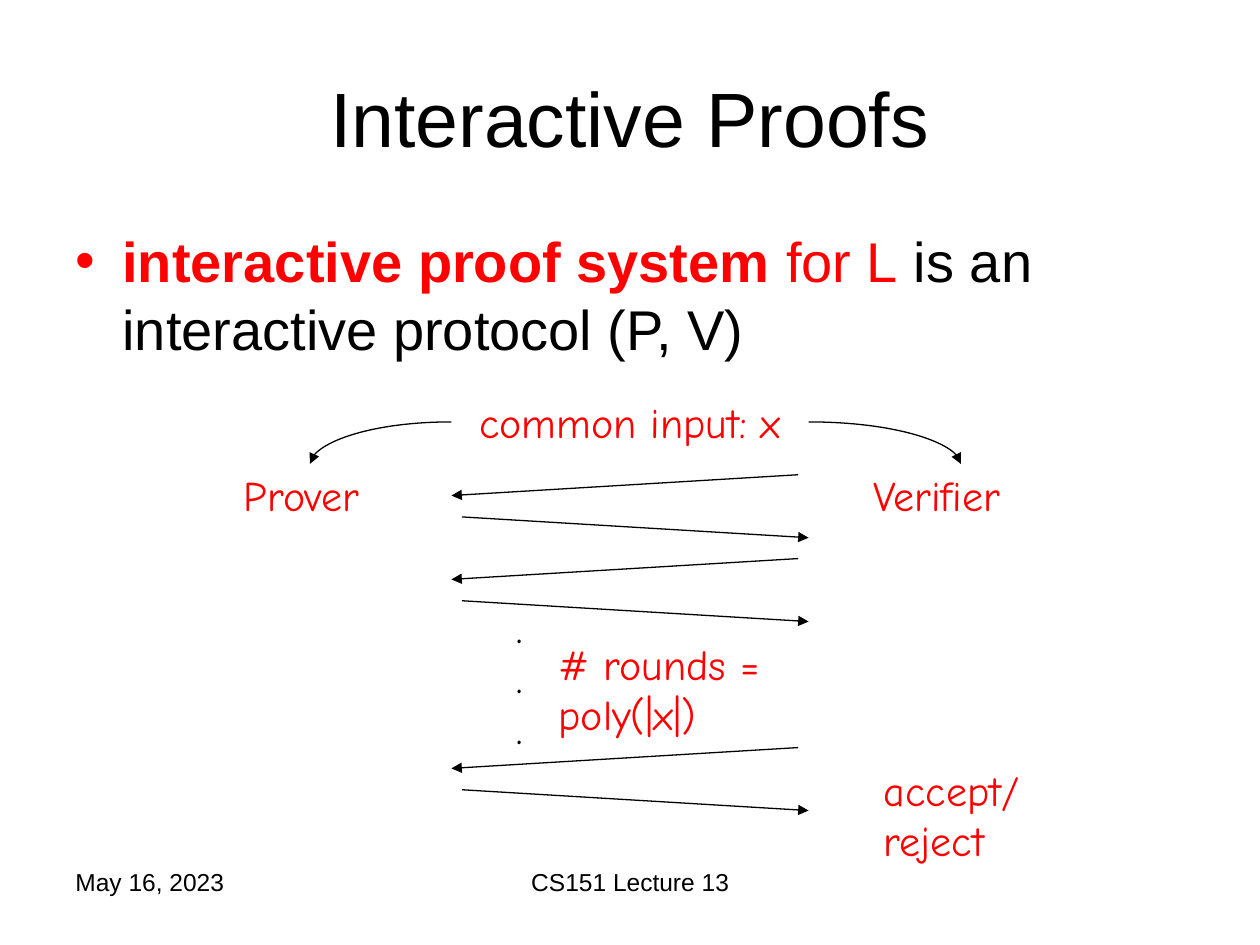
from dataclasses import dataclass

from lxml.etree import SubElement
from pptx import Presentation
from pptx.dml.color import RGBColor
from pptx.enum.shapes import MSO_CONNECTOR as Link
from pptx.enum.text import MSO_ANCHOR as Anchor, PP_ALIGN as Align
from pptx.oxml.ns import qn
from pptx.util import Cm, Pt


@dataclass(frozen=True)
class Theme:
    ink: RGBColor = RGBColor(0, 0, 0)
    accent: RGBColor = RGBColor(255, 0, 0)
    sans: str = "Arial"
    hand: str = "Comic Neue"
    title: int = 44
    body: int = 32
    label: int = 24
    footer: int = 14
    line: float = 0.75


theme = Theme()
deck = Presentation()
deck.slide_width, deck.slide_height = Cm(25.4), Cm(19.05)
page = deck.slides.add_slide(deck.slide_layouts[6])


def add_text(text, *, at, size, font=theme.sans, color=theme.ink,
             align=Align.LEFT, anchor=Anchor.TOP):
    box = page.shapes.add_textbox(*map(Cm, at))
    frame = box.text_frame
    frame.word_wrap = True
    frame.vertical_anchor = anchor
    para = frame.paragraphs[0]
    para.alignment = align
    pieces = [(text, color, False)] if isinstance(text, str) else text
    for words, tint, bold in pieces:
        span = para.add_run()
        span.text = words
        span.font.name = font
        span.font.size = Pt(size)
        span.font.bold = bold
        span.font.color.rgb = tint
    return box


def add_arrow(kind, start, end):
    arrow = page.shapes.add_connector(kind, *map(Cm, (*start, *end)))
    arrow.line.color.rgb = theme.ink
    arrow.line.width = Pt(theme.line)
    SubElement(arrow.line._get_or_add_ln(), qn("a:tailEnd"), type="triangle")
    SubElement(arrow._element.spPr, qn("a:effectLst"))
    return arrow


add_text("Interactive Proofs", at=(1.27, 0.76, 22.86, 3.18), size=theme.title,
         align=Align.CENTER, anchor=Anchor.MIDDLE)

definition = add_text(
    [("interactive proof system", theme.accent, True),
     (" for L", theme.accent, False),
     (" is an interactive protocol (P, V)", theme.ink, False)],
    at=(1.27, 4.45, 22.86, 12.57), size=theme.body)
bullet_para = definition.text_frame.paragraphs[0]
bullet_para.space_before = Pt(3)
bullet_format = bullet_para._p.get_or_add_pPr()
bullet_format.set("marL", str(Cm(0.95)))
bullet_format.set("indent", str(-Cm(0.95)))
SubElement(bullet_format, qn("a:buFont"), typeface=theme.sans)
SubElement(bullet_format, qn("a:buChar"), char="•")

labels = {}
for name, at, color, align in [
    ("Prover", (4.66, 9.35, 3.18, 1.27), theme.accent, Align.LEFT),
    ("Verifier", (17.36, 9.35, 4.02, 1.27), theme.accent, Align.LEFT),
    (". . .", (10.16, 12, 0.85, 3.3), theme.ink, Align.LEFT),
    ("common input: x", (9.1, 7.87, 7.2, 1.27), theme.accent, Align.CENTER),
    ("accept/reject", (17.57, 15.28, 3.81, 2.29), theme.accent, Align.LEFT),
    ("# rounds = poly(|x|)", (11.01, 12.74, 5.08, 2.29), theme.accent, Align.LEFT),
]:
    labels[name] = add_text(name, at=at, size=theme.label, font=theme.hand,
                            color=color, align=align)

for top in (9.57, 11.26, 15.07):
    add_arrow(Link.STRAIGHT, (16.09, top), (9.1, top + 0.42))
    add_arrow(Link.STRAIGHT, (9.31, top + 0.85), (16.3, top + 1.27))

for party, side, start, end in [
    ("Prover", 1, (9.1, 8.5), (6.25, 9.35)),
    ("Verifier", 3, (16.3, 8.5), (19.37, 9.35)),
]:
    curve = add_arrow(Link.CURVE, start, end)
    curve._element.spPr.find(qn("a:prstGeom")).set("prst", "curvedConnector2")
    curve.begin_connect(labels["common input: x"], side)
    curve.end_connect(labels[party], 0)

add_text("May 16, 2023", at=(1.27, 17.35, 5.92, 1.32), size=theme.footer)
add_text("CS151 Lecture 13", at=(8.68, 17.35, 8.05, 1.32), size=theme.footer,
         align=Align.CENTER)

deck.save("out.pptx")
